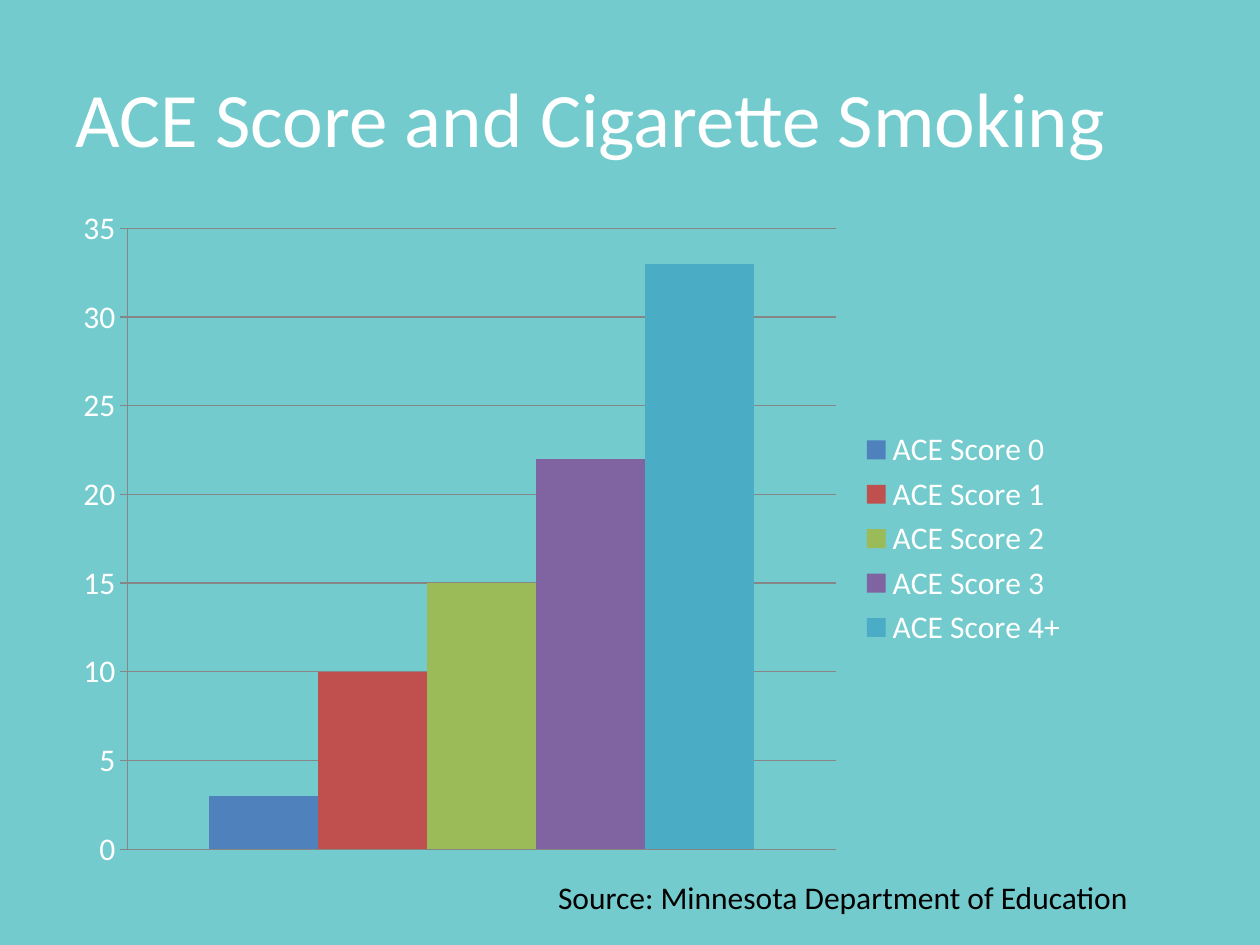
from dataclasses import dataclass

from pptx import Presentation
from pptx.chart.data import CategoryChartData
from pptx.dml.color import RGBColor
from pptx.enum.chart import XL_CHART_TYPE, XL_LEGEND_POSITION, XL_TICK_MARK
from pptx.enum.text import MSO_ANCHOR, MSO_AUTO_SIZE, PP_ALIGN
from pptx.util import Cm, Pt

CLUSTERED_COLUMN = XL_CHART_TYPE.COLUMN_CLUSTERED
LEGEND_RIGHT = XL_LEGEND_POSITION.RIGHT
TICK_OUTSIDE = XL_TICK_MARK.OUTSIDE
ANCHOR_MIDDLE = MSO_ANCHOR.MIDDLE
FIT_SHAPE = MSO_AUTO_SIZE.SHAPE_TO_FIT_TEXT
ALIGN_LEFT = PP_ALIGN.LEFT
TITLE_ONLY_LAYOUT = 5


@dataclass(frozen=True)
class Theme:
    font: str = "Calibri"
    background: str = "73CBCD"
    light: str = "FFFFFF"
    dark: str = "000000"
    grid: str = "868686"
    title_size: int = 44
    body_size: int = 18


THEME = Theme()

SMOKING_BY_SCORE = [
    ("ACE Score 0", 3, "4F81BD"),
    ("ACE Score 1", 10, "C0504D"),
    ("ACE Score 2", 15, "9BBB59"),
    ("ACE Score 3", 22, "8064A2"),
    ("ACE Score 4+", 33, "4BACC6"),
]


def color(value):
    return RGBColor.from_string(value)


def style_font(font, size, font_color):
    font.name = THEME.font
    font.size = Pt(size)
    font.color.rgb = color(font_color)


def place(shape, left, top, width, height):
    shape.left, shape.top = Cm(left), Cm(top)
    shape.width, shape.height = Cm(width), Cm(height)


def write_line(text_frame, text, size, font_color):
    paragraph = text_frame.paragraphs[0]
    paragraph.alignment = ALIGN_LEFT
    run = paragraph.add_run()
    run.text = text
    style_font(run.font, size, font_color)


def add_title(slide, text):
    title = slide.shapes.title
    place(title, 1.27, 0.76, 22.86, 3.18)
    title.text_frame.vertical_anchor = ANCHOR_MIDDLE
    write_line(title.text_frame, text, THEME.title_size, THEME.light)


def style_line(line):
    line.color.rgb = color(THEME.grid)
    line.width = Pt(0.75)


def style_axes(chart):
    chart.category_axis.visible = False
    axis = chart.value_axis
    axis.minimum_scale, axis.maximum_scale, axis.major_unit = 0, 35, 5
    axis.major_tick_mark = TICK_OUTSIDE
    axis.has_major_gridlines = True
    style_line(axis.major_gridlines.format.line)
    style_line(axis.format.line)


def add_smoking_chart(slide):
    data = CategoryChartData()
    data.categories = ["1"]
    for name, value, _ in SMOKING_BY_SCORE:
        data.add_series(name, [value])
    frame = slide.shapes.add_chart(
        CLUSTERED_COLUMN, Cm(1.27), Cm(3.94), Cm(20.52), Cm(13.84), data
    )
    chart = frame.chart
    chart.has_title = False
    style_font(chart.font, THEME.body_size, THEME.light)
    chart.has_legend = True
    chart.legend.position = LEGEND_RIGHT
    chart.legend.include_in_layout = False
    style_axes(chart)
    plot = chart.plots[0]
    plot.gap_width = 150
    plot.vary_by_categories = False
    for series, (_, _, fill_color) in zip(plot.series, SMOKING_BY_SCORE):
        series.format.fill.solid()
        series.format.fill.fore_color.rgb = color(fill_color)


def add_source(slide, text):
    box = slide.shapes.add_textbox(Cm(11), Cm(17.58), Cm(12.14), Cm(1.02))
    box.text_frame.word_wrap = False
    box.text_frame.auto_size = FIT_SHAPE
    write_line(box.text_frame, text, THEME.body_size, THEME.dark)


def main():
    presentation = Presentation()
    presentation.slide_width, presentation.slide_height = Cm(25.4), Cm(19.05)
    slide = presentation.slides.add_slide(
        presentation.slide_layouts[TITLE_ONLY_LAYOUT]
    )
    slide.background.fill.solid()
    slide.background.fill.fore_color.rgb = color(THEME.background)
    add_title(slide, "ACE Score and Cigarette Smoking")
    add_smoking_chart(slide)
    add_source(slide, "Source: Minnesota Department of Education")
    presentation.save("out.pptx")


if __name__ == "__main__":
    main()
